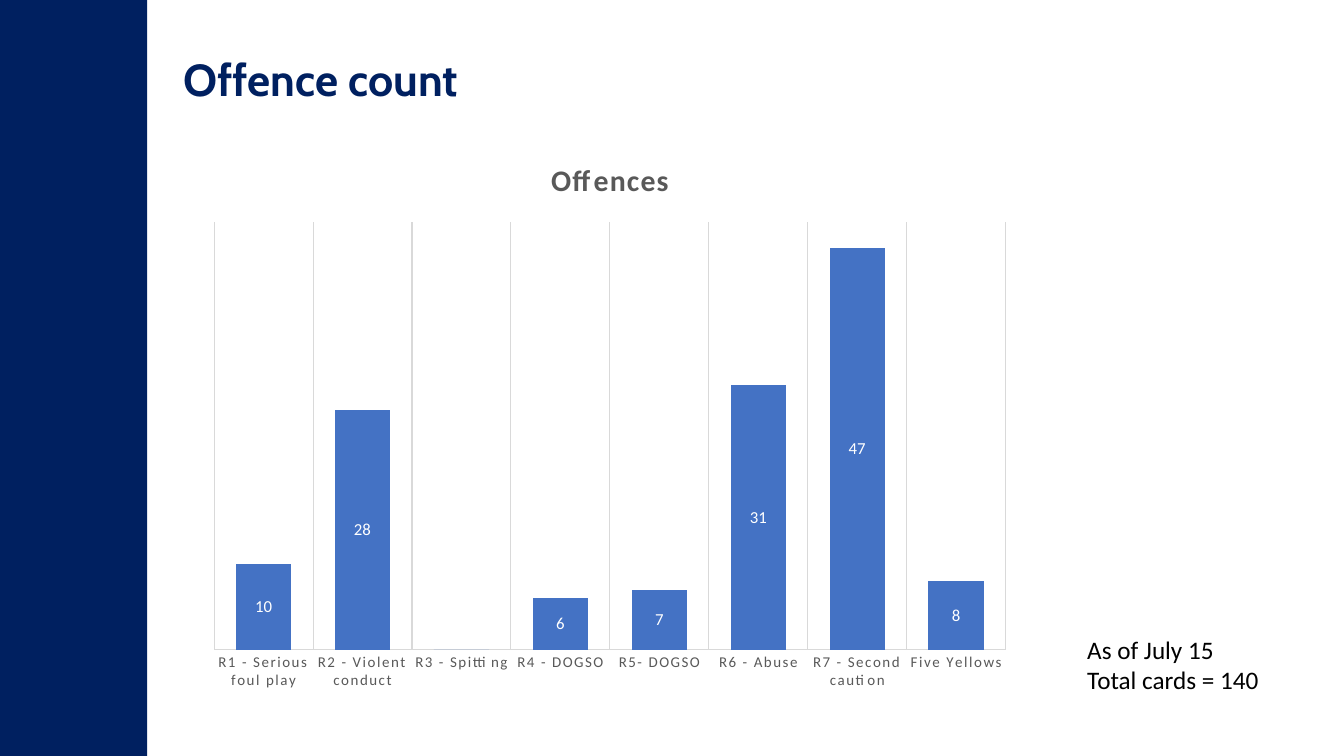
from dataclasses import dataclass

from lxml import etree
from pptx import Presentation
from pptx.chart.data import CategoryChartData
from pptx.dml.color import RGBColor
from pptx.enum import chart as charts, shapes, text
from pptx.util import Cm, Pt

COLOURS = {
    "navy": "002060",
    "black": "000000",
    "white": "FFFFFF",
    "grey": "595959",
    "rule": "D9D9D9",
    "bar": "4472C4",
}
CHART_NS = "http://schemas.openxmlformats.org/drawingml/2006/chart"
OFFENCES = {
    "R1 - Serious foul play": 10,
    "R2 - Violent conduct": 28,
    "R3 - Spitting": 0,
    "R4 - DOGSO": 6,
    "R5- DOGSO": 7,
    "R6 - Abuse": 31,
    "R7 - Second caution": 47,
    "Five Yellows": 8,
}


@dataclass(frozen=True)
class Caption:
    lines: tuple[str, ...]
    left: float
    top: float
    width: float
    height: float
    size: float
    font: str
    colour: str
    bold: bool = False


CAPTIONS = (
    Caption(("Offence count",), 4.37, 1.17, 25.25, 1.63, 32, "Cabin", "navy", True),
    Caption(("As of July 15", "Total cards = 140"), 27.15, 15.85, 5.69, 1.8,
            18, "Calibri", "black"),
)


def rgb(name: str) -> RGBColor:
    return RGBColor.from_string(COLOURS[name])


def style_font(font, name: str, size: float, colour: str, bold: bool = False) -> None:
    font.name = name
    font.size = Pt(size)
    font.bold = bold
    font.color.rgb = rgb(colour)


def add_side_band(page) -> None:
    band = page.shapes.add_shape(shapes.MSO_SHAPE.RECTANGLE, 0, 0, Cm(3.71), Cm(19.05))
    band.shadow.inherit = False
    band.fill.solid()
    band.fill.fore_color.rgb = rgb("navy")
    band.line.fill.background()


def add_caption(page, caption: Caption) -> None:
    box = page.shapes.add_textbox(
        Cm(caption.left), Cm(caption.top), Cm(caption.width), Cm(caption.height))
    frame = box.text_frame
    frame.word_wrap = True
    frame.auto_size = text.MSO_AUTO_SIZE.SHAPE_TO_FIT_TEXT
    for index, line in enumerate(caption.lines):
        para = frame.add_paragraph() if index else frame.paragraphs[0]
        span = para.add_run()
        span.text = line
        style_font(span.font, caption.font, caption.size, caption.colour, caption.bold)


def place_plot_area(chart, **fractions: float) -> None:
    """Fix the inner plot area as fractions (x, y, w, h) of the chart."""
    area = chart.element.xpath("c:chart/c:plotArea")[0]
    for old in area.xpath("c:layout"):
        area.remove(old)
    layout = etree.Element(f"{{{CHART_NS}}}layout")
    manual = etree.SubElement(layout, f"{{{CHART_NS}}}manualLayout")
    settings = {"layoutTarget": "inner", "xMode": "edge", "yMode": "edge", **fractions}
    for tag, value in settings.items():
        etree.SubElement(manual, f"{{{CHART_NS}}}{tag}").set("val", str(value))
    area.insert(0, layout)


def space_letters(chart, query: str, hundredths: int) -> None:
    for properties in chart.element.xpath(query):
        properties.set("spc", str(hundredths))


def add_offence_chart(page) -> None:
    data = CategoryChartData()
    data.categories = list(OFFENCES)
    data.add_series("Series 1", list(OFFENCES.values()))
    chart = page.shapes.add_chart(
        charts.XL_CHART_TYPE.COLUMN_STACKED,
        Cm(4.98), Cm(3.48), Cm(20.78), Cm(14.17), data).chart
    style_font(chart.font, "Calibri", 10, "black")
    chart.has_legend = False

    chart.has_title = True
    span = chart.chart_title.text_frame.paragraphs[0].add_run()
    span.text = "Offences"
    style_font(span.font, "Calibri", 21.28, "grey", True)
    chart.chart_title.include_in_layout = False

    axis = chart.category_axis
    axis.major_tick_mark = charts.XL_TICK_MARK.NONE
    axis.has_major_gridlines = True
    for line in (axis.format.line, axis.major_gridlines.format.line):
        line.color.rgb = rgb("rule")
        line.width = Pt(0.75)
    style_font(axis.tick_labels.font, "Calibri", 10.64, "grey")

    chart.value_axis.has_major_gridlines = False
    chart.value_axis.minimum_scale = 0
    chart.value_axis.maximum_scale = 50
    chart.value_axis.visible = False

    plot = chart.plots[0]
    plot.gap_width = 79
    plot.overlap = 100
    plot.vary_by_categories = False
    series = plot.series[0]
    series.format.fill.solid()
    series.format.fill.fore_color.rgb = rgb("bar")
    labels = series.data_labels
    labels.show_value = True
    labels.position = charts.XL_LABEL_POSITION.CENTER
    labels.number_format = "0;;;"
    labels.number_format_is_linked = False
    style_font(labels.font, "Calibri", 12, "white")

    space_letters(chart, "c:chart/c:title//a:rPr", 100)
    space_letters(chart, "c:chart/c:plotArea/c:catAx/c:txPr//a:defRPr", 120)
    place_plot_area(chart, x=0.02, y=0.15, w=0.96, h=0.76)


def main() -> None:
    deck = Presentation()
    deck.slide_width = Cm(33.87)
    deck.slide_height = Cm(19.05)
    page = deck.slides.add_slide(deck.slide_layouts[6])
    add_side_band(page)
    add_offence_chart(page)
    for caption in CAPTIONS:
        add_caption(page, caption)
    deck.save("out.pptx")


if __name__ == "__main__":
    main()
